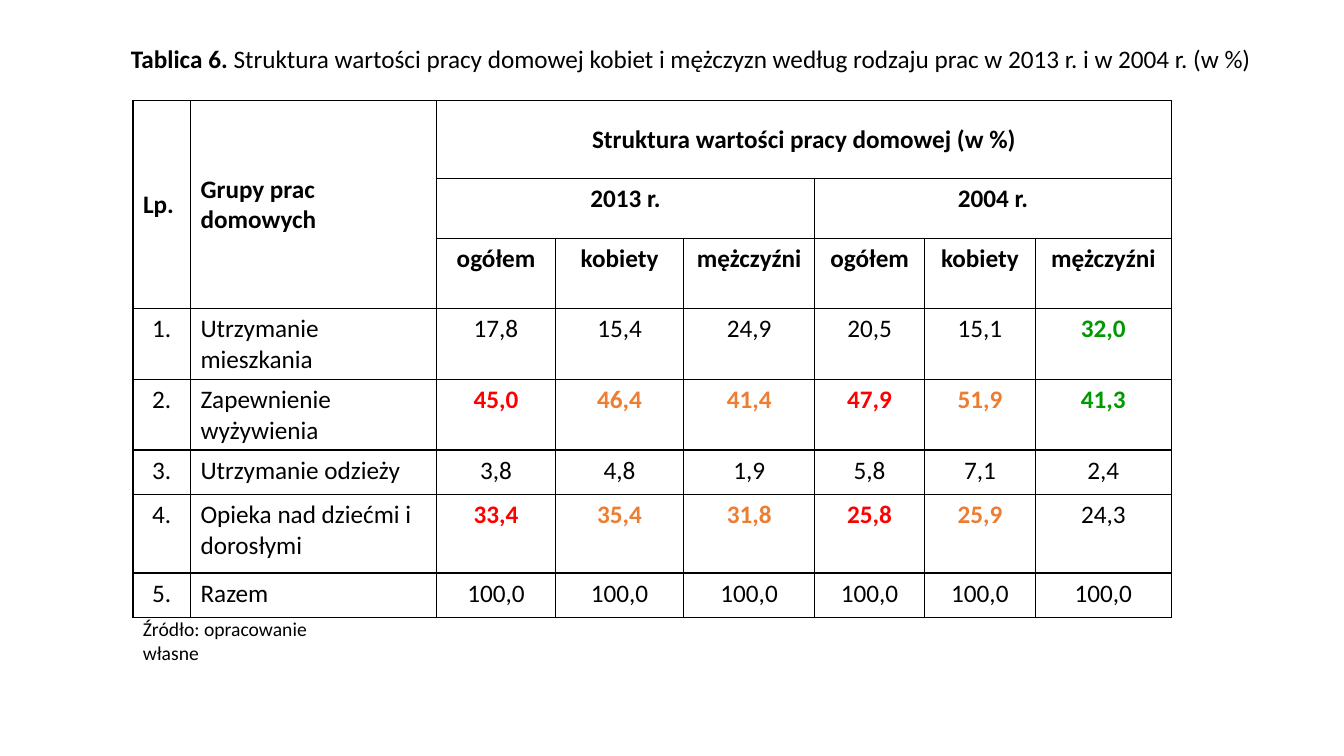
from lxml.etree import SubElement
from pptx import Presentation
from pptx.dml.color import RGBColor
from pptx.enum.text import MSO_ANCHOR as Anchor, PP_ALIGN as Align
from pptx.oxml.ns import qn
from pptx.util import Cm, Pt

COLORS = {"ink": "000000", "total": "FF0000", "main": "ED7D31", "men": "009900"}

TITLE = [
    ("Tablica 6. ", True),
    ("Struktura wartości pracy domowej kobiet i mężczyzn według rodzaju prac "
     "w 2013 r. i w 2004 r. (w %)", False),
]
SOURCE = "Źródło: opracowanie własne"
NUMBER_HEAD, GROUP_HEAD = "Lp.", "Grupy prac domowych"
MEASURE = "Struktura wartości pracy domowej (w %)"
YEARS = ["2013 r.", "2004 r."]
PEOPLE = ["ogółem", "kobiety", "mężczyźni"]
ACCENTS = ["total", "main", "main", "total", "main", "men"]
WORK = [
    ("Utrzymanie mieszkania", ["17,8", "15,4", "24,9", "20,5", "15,1", "32,0"], [5]),
    ("Zapewnienie wyżywienia", ["45,0", "46,4", "41,4", "47,9", "51,9", "41,3"], range(6)),
    ("Utrzymanie odzieży", ["3,8", "4,8", "1,9", "5,8", "7,1", "2,4"], []),
    ("Opieka nad dziećmi i dorosłymi", ["33,4", "35,4", "31,8", "25,8", "25,9", "24,3"], range(5)),
    ("Razem", ["100,0"] * 6, []),
]
COLUMN_WIDTHS = [1.45, 6.2, 3, 3.23, 3.3, 2.77, 2.79, 3.43]
ROW_HEIGHTS = [1.96, 1.5, 1.78, 1.78, 1.78, 1.12, 1.98, 1.12]


def write(frame, text, size=18, bold=False, color="ink", align=Align.LEFT):
    paragraph = frame.paragraphs[0]
    paragraph.alignment = align
    run = paragraph.add_run()
    run.text = text
    run.font.name = "Calibri"
    run.font.size = Pt(size)
    run.font.bold = bold
    run.font.color.rgb = RGBColor.from_string(COLORS[color])


def add_frame(slide, left, top, width, height):
    frame = slide.shapes.add_textbox(Cm(left), Cm(top), Cm(width), Cm(height)).text_frame
    frame.word_wrap = True
    return frame


def outline(cell):
    cell.fill.background()
    properties = cell._tc.get_or_add_tcPr()
    for position, side in enumerate(["lnL", "lnR", "lnT", "lnB"]):
        line = SubElement(properties, qn(f"a:{side}"), w=str(Pt(1)))
        fill = SubElement(line, qn("a:solidFill"))
        SubElement(fill, qn("a:srgbClr"), val=COLORS["ink"])
        properties.insert(position, line)


def fill_heading(grid):
    def head(row, column, text, last_row, last_column, middle=False, align=Align.CENTER):
        cell = grid.cell(row, column)
        if (row, column) != (last_row, last_column):
            cell.merge(grid.cell(last_row, last_column))
        if middle:
            cell.vertical_anchor = Anchor.MIDDLE
        write(cell.text_frame, text, bold=True, align=align)

    for column, text in enumerate([NUMBER_HEAD, GROUP_HEAD]):
        head(0, column, text, 2, column, middle=True, align=Align.LEFT)
    head(0, 2, MEASURE, 0, 7, middle=True)
    for year_index, year in enumerate(YEARS):
        first = 2 + year_index * len(PEOPLE)
        head(1, first, year, 1, first + len(PEOPLE) - 1)
        for column, person in enumerate(PEOPLE, first):
            head(2, column, person, 2, column)


def fill_work(grid):
    for number, (group, shares, highlights) in enumerate(WORK, 1):
        row = number + 2
        write(grid.cell(row, 0).text_frame, f"{number}.", align=Align.CENTER)
        write(grid.cell(row, 1).text_frame, group)
        for index, share in enumerate(shares):
            marked = index in highlights
            write(grid.cell(row, index + 2).text_frame, share, bold=marked,
                  color=ACCENTS[index] if marked else "ink", align=Align.CENTER)


def main():
    deck = Presentation()
    deck.slide_width, deck.slide_height = Cm(33.87), Cm(19.05)
    slide = deck.slides.add_slide(deck.slide_layouts[6])

    title = add_frame(slide, 3.05, 0.97, 29.36, 1.68)
    for text, bold in TITLE:
        write(title, text, bold=bold, align=Align.JUSTIFY)

    grid = slide.shapes.add_table(
        len(ROW_HEIGHTS), len(COLUMN_WIDTHS), Cm(3.35), Cm(2.54),
        Cm(sum(COLUMN_WIDTHS)), Cm(sum(ROW_HEIGHTS))).table
    grid.first_row = grid.horz_banding = False
    for column, width in zip(grid.columns, COLUMN_WIDTHS):
        column.width = Cm(width)
    for row, height in zip(grid.rows, ROW_HEIGHTS):
        row.height = Cm(height)
    for cell in grid.iter_cells():
        outline(cell)
    fill_heading(grid)
    fill_work(grid)

    write(add_frame(slide, 3.35, 15.42, 6.12, 1.45), SOURCE, size=14)
    deck.save("out.pptx")


if __name__ == "__main__":
    main()
